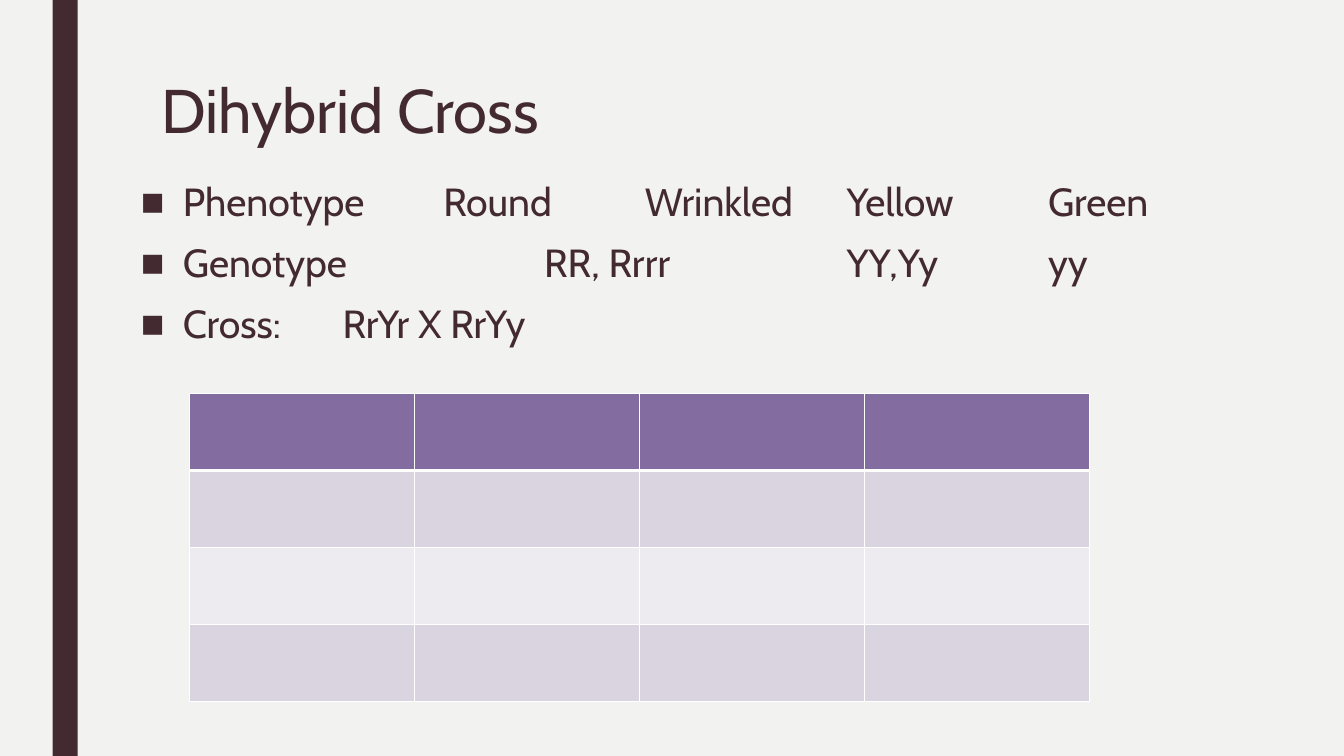
"""Build the Dihybrid Cross slide."""
from dataclasses import dataclass

from lxml import etree
from pptx import Presentation
from pptx.dml.color import RGBColor
from pptx.enum.shapes import MSO_SHAPE
from pptx.enum.text import MSO_ANCHOR, MSO_AUTO_SIZE, PP_ALIGN
from pptx.oxml.ns import qn
from pptx.util import Emu, Pt

RECTANGLE = MSO_SHAPE.RECTANGLE
TOP = MSO_ANCHOR.TOP
NO_AUTOFIT = MSO_AUTO_SIZE.NONE
LEFT = PP_ALIGN.LEFT

EMU_PER_PX = 6350
FONT = "Cabin"
COLORS = {
    "background": "F2F2F0",
    "ink": "432A30",
    "header": "836C9F",
    "band_dark": "D9D4DF",
    "band_light": "EDEBF0",
    "border": "FFFFFF",
}
BULLET_INDENT = 60
TAB_DISTANCE = 144
COLUMN_COUNT = 4
BULLETS = [
    "Phenotype\tRound\tWrinkled\tYellow\tGreen",
    "Genotype\t\tRR, Rr\trr\t\tYY,Yy\t\tyy",
    "Cross:\tRrYr X RrYy",
]


@dataclass(frozen=True)
class Box:
    """A rectangle in px."""
    left: int
    top: int
    width: int
    height: int

    def emu(self) -> tuple:
        """Return left, top, width and height in EMU."""
        return tuple(map(px, (self.left, self.top, self.width, self.height)))


@dataclass(frozen=True)
class TableRow:
    """The fill and the horizontal border widths of a table row."""
    fill: str
    top_border: int = 1
    bottom_border: int = 1


BAR = Box(75, 0, 36, 1080)
TITLE = Box(216, 108, 1512, 233)
BODY = Box(187, 252, 1541, 672)
TABLE = Box(271, 562, 1286, 440)
ROWS = [
    TableRow("header", bottom_border=3),
    TableRow("band_dark", top_border=3),
    TableRow("band_light"),
    TableRow("band_dark"),
]


def px(length: int) -> Emu:
    """Turn px into EMU."""
    return Emu(length * EMU_PER_PX)


def color(name: str) -> RGBColor:
    """Look up a named colour."""
    return RGBColor.from_string(COLORS[name])


def add_bullet(paragraph) -> None:
    """Give a paragraph a square bullet, a hanging indent and even tabs."""
    properties = paragraph._p.get_or_add_pPr()
    properties.set("marL", str(px(BULLET_INDENT)))
    properties.set("indent", str(-px(BULLET_INDENT)))
    properties.set("defTabSz", str(px(TAB_DISTANCE)))
    etree.SubElement(properties, qn("a:buFont")).set("typeface", "Arial")
    etree.SubElement(properties, qn("a:buChar")).set("char", "■")


def write_text(paragraph, text: str, *, size: int, line_spacing: float,
               before: int = 0, after: int = 0, bullet: bool = False) -> None:
    """Write formatted text into a paragraph."""
    paragraph.alignment = LEFT
    paragraph.line_spacing = line_spacing
    paragraph.space_before = Pt(before)
    paragraph.space_after = Pt(after)
    if bullet:
        add_bullet(paragraph)
    run = paragraph.add_run()
    run.text = text
    run.font.name = FONT
    run.font.size = Pt(size)
    run.font.color.rgb = color("ink")


def place_placeholder(shape, box: Box):
    """Move a placeholder and return its text frame."""
    shape.left, shape.top, shape.width, shape.height = box.emu()
    frame = shape.text_frame
    frame.word_wrap = True
    frame.auto_size = NO_AUTOFIT
    frame.vertical_anchor = TOP
    return frame


def draw_bar(slide) -> None:
    """Draw the vertical bar behind the placeholders."""
    shape = slide.shapes.add_shape(RECTANGLE, *BAR.emu())
    shape.shadow.inherit = False
    shape.fill.solid()
    shape.fill.fore_color.rgb = color("ink")
    shape.line.fill.background()
    slide.shapes.title.element.addprevious(shape.element)


def style_cell(cell, row: TableRow) -> None:
    """Set the borders and the fill of a cell."""
    properties = cell._tc.get_or_add_tcPr()
    widths = {"L": 1, "R": 1, "T": row.top_border, "B": row.bottom_border}
    for side, width in widths.items():
        line = etree.SubElement(properties, qn(f"a:ln{side}"), w=str(Pt(width)))
        fill = etree.SubElement(line, qn("a:solidFill"))
        etree.SubElement(fill, qn("a:srgbClr"), val=COLORS["border"])
    cell.fill.solid()
    cell.fill.fore_color.rgb = color(row.fill)


def draw_table(slide) -> None:
    """Draw the empty cross table."""
    table = slide.shapes.add_table(len(ROWS), COLUMN_COUNT, *TABLE.emu()).table
    for index, row in enumerate(ROWS):
        for cell in table.rows[index].cells:
            style_cell(cell, row)


def main() -> None:
    """Build and save the presentation."""
    presentation = Presentation()
    presentation.slide_width, presentation.slide_height = px(1920), px(1080)
    slide = presentation.slides.add_slide(presentation.slide_layouts[1])
    slide.background.fill.solid()
    slide.background.fill.fore_color.rgb = color("background")
    draw_bar(slide)
    title = place_placeholder(slide.shapes.title, TITLE)
    write_text(title.paragraphs[0], "Dihybrid Cross", size=44, line_spacing=0.89)
    body = place_placeholder(slide.placeholders[1], BODY)
    for index, text in enumerate(BULLETS):
        paragraph = body.add_paragraph() if index else body.paragraphs[0]
        write_text(paragraph, text, size=28, line_spacing=0.94,
                   before=10, after=2, bullet=True)
    draw_table(slide)
    presentation.save("out.pptx")


if __name__ == "__main__":
    main()
